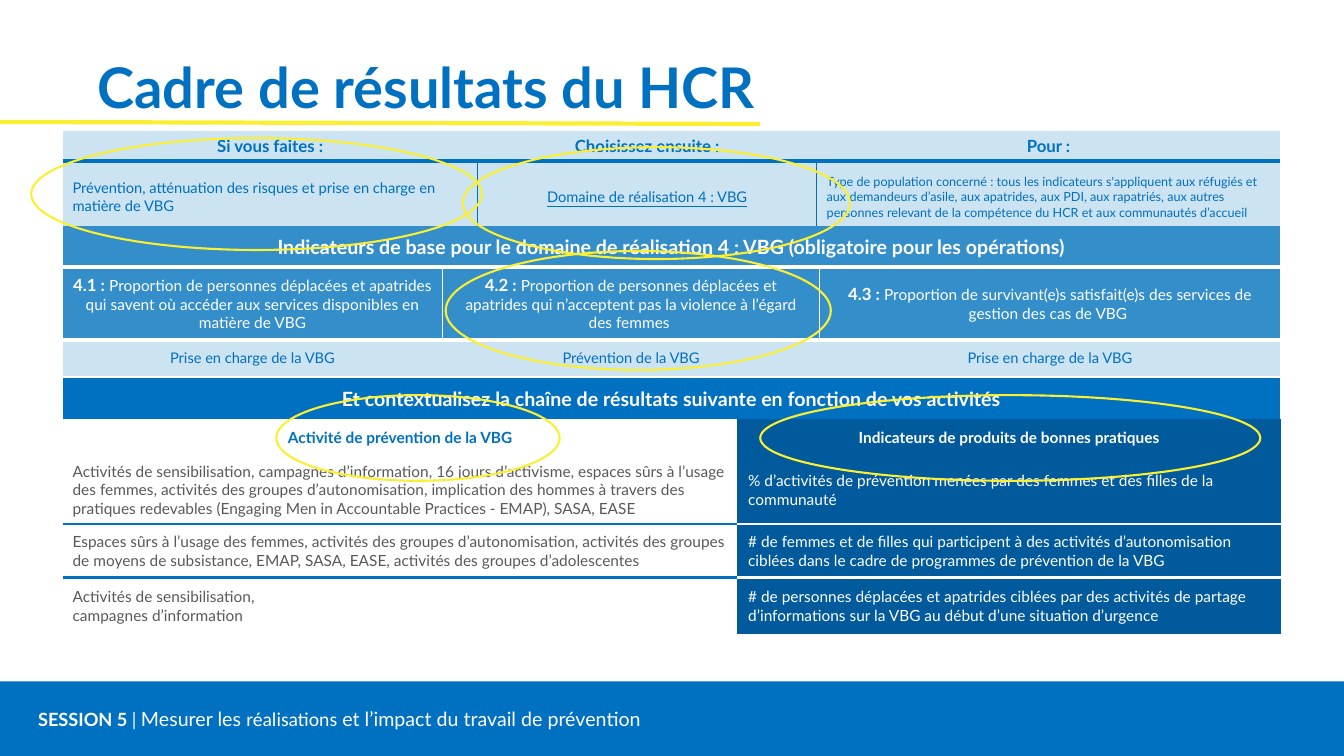
"""Build the slide presenting the HCR results framework for GBV prevention."""
from dataclasses import dataclass

from lxml.etree import SubElement
from pptx import Presentation
from pptx.dml.color import RGBColor
from pptx.enum.shapes import MSO_CONNECTOR, MSO_SHAPE
from pptx.enum.text import MSO_ANCHOR, PP_ALIGN
from pptx.oxml.ns import qn
from pptx.util import Inches, Pt


@dataclass(frozen=True)
class Theme:
    """Colours, type sizes and fonts of the slide."""
    blue: str = "0070C0"
    medium: str = "338EC9"
    light: str = "CCE3F1"
    deep: str = "005A9B"
    grey: str = "595959"
    white: str = "FFFFFF"
    yellow: str = "FBEF33"
    font: str = "Lato"
    second_font: str = "Calibri"
    title: float = 40
    band: float = 14
    session: float = 13
    head: float = 12
    text: float = 11
    small: float = 10.5
    note: float = 9


@dataclass(frozen=True)
class CellStyle:
    """Type, fill and alignment of one kind of table cell."""
    size: float
    color: str
    fill: str = ""
    bold: bool = False
    centered: bool = False
    underline: bool = False


THEME = Theme()
WIDTH, HEIGHT = 13.33, 7.5
TABLE_LEFT, TABLE_WIDTH = 0.62, 12.08
NO_STYLE_TABLE = "{2D5ABB26-0587-4C30-8999-92F81FD0307C}"
OPPOSITE = {"R": ("L", 0, 1), "B": ("T", 1, 0)}

STYLES = {
    "head": CellStyle(THEME.head, THEME.blue, THEME.light, bold=True, centered=True),
    "work": CellStyle(THEME.small, THEME.blue, THEME.light),
    "area": CellStyle(THEME.small, THEME.blue, THEME.light, centered=True, underline=True),
    "population": CellStyle(THEME.note, THEME.blue, THEME.light),
    "core band": CellStyle(THEME.band, THEME.white, THEME.medium, bold=True, centered=True),
    "core": CellStyle(THEME.text, THEME.white, THEME.medium, centered=True),
    "topic": CellStyle(THEME.small, THEME.blue, THEME.light, centered=True),
    "chain band": CellStyle(THEME.band, THEME.white, THEME.blue, bold=True, centered=True),
    "activity head": CellStyle(THEME.text, THEME.blue, bold=True, centered=True),
    "product head": CellStyle(THEME.text, THEME.white, THEME.deep, bold=True, centered=True),
    "activity": CellStyle(THEME.text, THEME.grey),
    "product": CellStyle(THEME.text, THEME.white, THEME.deep),
}

TABLES = [
    {
        "top": 1.3, "columns": (4.12, 3.36, 4.6), "rows": (0.28, 0.71),
        "cells": [
            [("head", "Si vous faites :"), ("head", "Choisissez ensuite :"), ("head", "Pour :")],
            [("work", "Prévention, atténuation des risques et prise en charge en matière de VBG"),
             ("area", "Domaine de réalisation 4 : VBG"),
             ("population", "Type de population concerné : tous les indicateurs s'appliquent aux réfugiés "
              "et aux demandeurs d’asile, aux apatrides, aux PDI, aux rapatriés, aux autres personnes "
              "relevant de la compétence du HCR et aux communautés d’accueil")],
        ],
        "rules": [((0,), (0, 1, 2), "B", THEME.blue, 3), ((1,), (0, 1), "R", THEME.blue, 1)],
    },
    {
        "top": 2.24, "columns": (3.77, 3.74, 4.57), "rows": (0.41, 0.72, 0.36),
        "cells": [
            [("core band", "Indicateurs de base pour le domaine de réalisation 4 : VBG "
              "(obligatoire pour les opérations)")],
            [("core", "4.1 : |Proportion de personnes déplacées et apatrides qui savent où accéder "
              "aux services disponibles en matière de VBG"),
             ("core", "4.2 : |Proportion de personnes déplacées et apatrides qui n’acceptent pas "
              "la violence à l’égard des femmes "),
             ("core", "4.3 : |Proportion de survivant(e)s satisfait(e)s des services de gestion "
              "des cas de VBG ")],
            [("topic", "Prise en charge de la VBG"), ("topic", "Prévention de la VBG"),
             ("topic", "Prise en charge de la VBG")],
        ],
        "rules": [((0,), (0, 1, 2), "B", THEME.white, 3), ((1,), (0, 1), "R", THEME.white, 1)],
    },
    {
        "top": 3.75, "columns": (6.7, 5.38), "rows": (0.41, 0.36, 0.68, 0.53, 0.56),
        "cells": [
            [("chain band", "Et contextualisez la chaîne de résultats suivante en fonction de vos activités")],
            [("activity head", "Activité de prévention de la VBG"),
             ("product head", "Indicateurs de produits de bonnes pratiques")],
            [("activity", "Activités de sensibilisation, campagnes d’information, 16 jours d’activisme, "
              "espaces sûrs à l’usage des femmes, activités des groupes d’autonomisation, implication des "
              "hommes à travers des pratiques redevables (Engaging Men in Accountable Practices - EMAP), "
              "SASA, EASE"),
             ("product", "% d’activités de prévention menées par des femmes et des filles de la communauté")],
            [("activity", "Espaces sûrs à l’usage des femmes, activités des groupes d’autonomisation, "
              "activités des groupes de moyens de subsistance, EMAP, SASA, EASE, activités des groupes "
              "d’adolescentes"),
             ("product", "# de femmes et de filles qui participent à des activités d’autonomisation ciblées "
              "dans le cadre de programmes de prévention de la VBG")],
            [("activity", "Activités de sensibilisation,\ncampagnes d’information"),
             ("product", "# de personnes déplacées et apatrides ciblées par des activités de partage "
              "d’informations sur la VBG au début d’une situation d’urgence")],
        ],
        "rules": [((1, 2, 3, 4), (0, 1), "R", THEME.deep, 1.5),
                  ((2, 3), (0,), "B", THEME.blue, 2.25), ((2, 3), (1,), "B", THEME.white, 2.25)],
    },
]
HIGHLIGHTS = [(4.59, 1.46, 3.84, 1.11), (0.31, 1.37, 4.47, 1.11), (4.42, 2.49, 3.82, 1.18),
              (2.74, 3.92, 2.81, 0.85), (7.54, 3.92, 4.96, 0.85)]
TITLE = [("Cadre de résultats du HCR", THEME.title, THEME.font, True)]
FOOTER = [("SESSION 5 ", THEME.session, THEME.font, True), ("| ", THEME.session, THEME.font, False),
          ("Mesurer les ", THEME.band, THEME.font, False),
          ("réalisations", THEME.band, THEME.second_font, False),
          (" et l’impact du travail de prévention", THEME.band, THEME.font, False)]


def color(value):
    return RGBColor.from_string(value)


def add_text(slide, box, runs, text_color, anchor):
    frame = slide.shapes.add_textbox(*map(Inches, box)).text_frame
    frame.word_wrap = True
    frame.vertical_anchor = anchor
    paragraph = frame.paragraphs[0]
    paragraph.font.color.rgb = color(text_color)
    for text, size, font, bold in runs:
        run = paragraph.add_run()
        run.text = text
        run.font.size, run.font.name, run.font.bold = Pt(size), font, bold


def add_shape(slide, kind, box, fill="", line=""):
    shape = slide.shapes.add_shape(kind, *map(Inches, box))
    shape.shadow.inherit = False
    for part, value in ((shape.fill, fill), (shape.line.fill, line)):
        if value:
            part.solid()
            part.fore_color.rgb = color(value)
        else:
            part.background()
    if line:
        shape.line.width = Pt(1.5)


def fill_cell(cell, style, text, borders):
    properties = cell._tc.get_or_add_tcPr()
    for side in "LRTB":
        if side in borders:
            value, width = borders[side]
            line = SubElement(properties, qn(f"a:ln{side}"), w=str(Pt(width)))
            SubElement(SubElement(line, qn("a:solidFill")), qn("a:srgbClr"), val=value)
    if style.fill:
        cell.fill.solid()
        cell.fill.fore_color.rgb = color(style.fill)
    else:
        cell.fill.background()
    cell.vertical_anchor = MSO_ANCHOR.MIDDLE
    lead, separator, body = text.rpartition("|")
    cell.text = body
    for paragraph in cell.text_frame.paragraphs:
        paragraph.alignment = PP_ALIGN.CENTER if style.centered else PP_ALIGN.LEFT
        font = paragraph.font
        font.name, font.size, font.color.rgb = THEME.font, Pt(style.size), color(style.color)
        font.bold, font.underline = style.bold, style.underline
    if lead:
        first = cell.text_frame.paragraphs[0]
        first.runs[0].text = lead
        first.runs[0].font.size, first.runs[0].font.bold = Pt(THEME.head), True
        first.add_run().text = body


def add_results_table(slide, top, columns, rows, cells, rules):
    frame = slide.shapes.add_table(len(rows), len(columns), *map(
        Inches, (TABLE_LEFT, top, TABLE_WIDTH, sum(rows))))
    table = frame.table
    table._tbl.tblPr.find(qn("a:tableStyleId")).text = NO_STYLE_TABLE
    table.first_row = table.horz_banding = False
    for column, width in zip(table.columns, columns):
        column.width = Inches(width)
    for row, height in zip(table.rows, rows):
        row.height = Inches(height)
    borders = {(r, c): {} for r in range(len(rows)) for c in range(len(columns))}
    for rule_rows, rule_columns, side, value, width in rules:
        other, down, across = OPPOSITE[side]
        for r in rule_rows:
            for c in rule_columns:
                borders[r, c][side] = (value, width)
                borders.get((r + down, c + across), {})[other] = (value, width)
    for r, entries in enumerate(cells):
        if len(entries) == 1:
            table.cell(r, 0).merge(table.cell(r, len(columns) - 1))
        for c, (style, text) in enumerate(entries):
            fill_cell(table.cell(r, c), STYLES[style], text, borders[r, c])


def main():
    presentation = Presentation()
    presentation.slide_width, presentation.slide_height = Inches(WIDTH), Inches(HEIGHT)
    slide = presentation.slides.add_slide(presentation.slide_layouts[6])
    add_shape(slide, MSO_SHAPE.RECTANGLE, (0, 6.76, WIDTH, HEIGHT - 6.76), fill=THEME.blue)
    add_text(slide, (0.28, 6.96, 6.96, 0.34), FOOTER, THEME.white, MSO_ANCHOR.MIDDLE)
    add_text(slide, (0.87, 0.52, 8.5, 0.72), TITLE, THEME.blue, MSO_ANCHOR.BOTTOM)
    underline = slide.shapes.add_connector(MSO_CONNECTOR.STRAIGHT, *map(Inches, (0, 1.21, 7.54, 1.23)))
    underline.line.color.rgb, underline.line.width = color(THEME.yellow), Pt(3)
    SubElement(underline._element.spPr, qn("a:effectLst"))
    for table in TABLES:
        add_results_table(slide, **table)
    for box in HIGHLIGHTS:
        add_shape(slide, MSO_SHAPE.OVAL, box, line=THEME.yellow)
    presentation.save("out.pptx")


if __name__ == "__main__":
    main()
